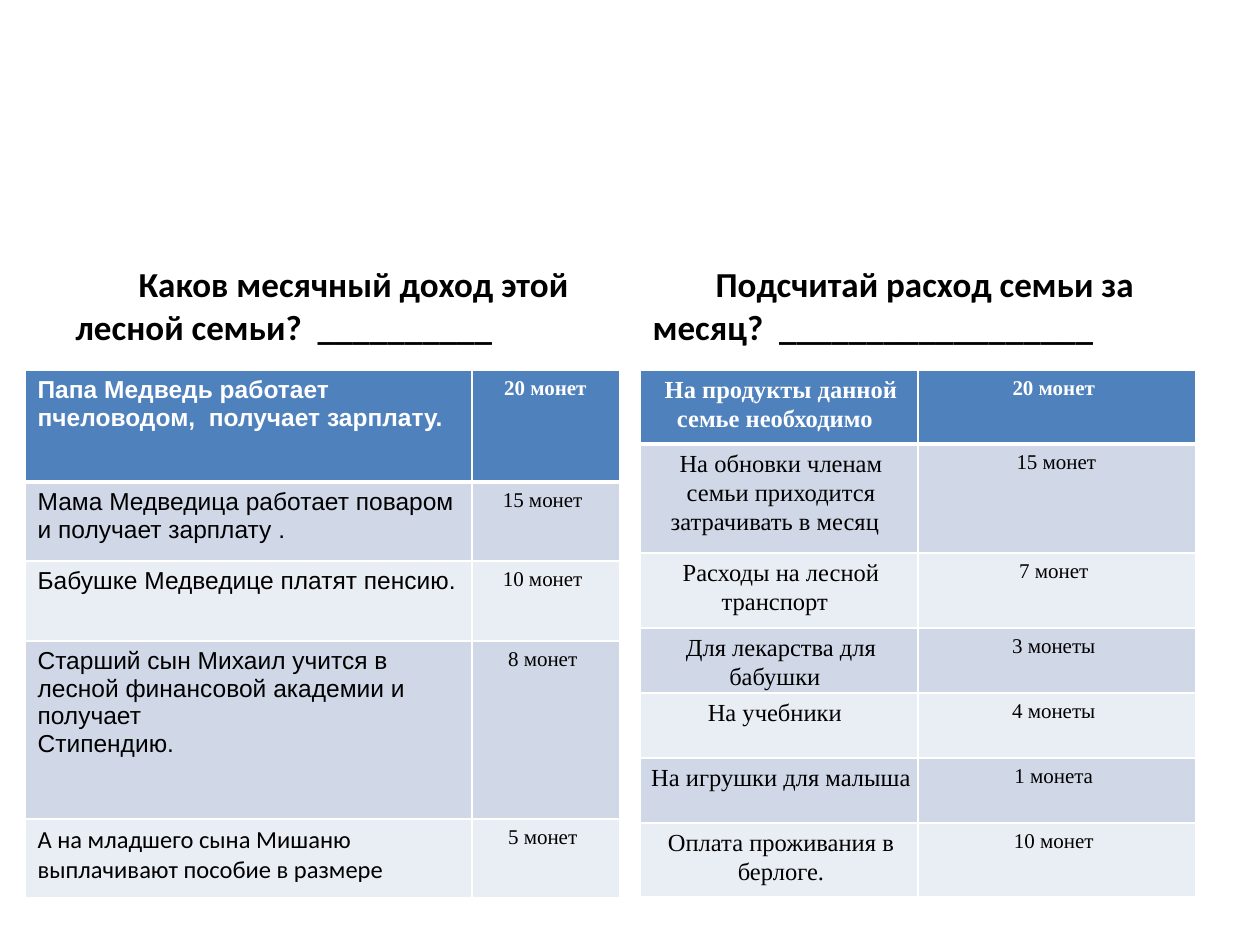
from dataclasses import dataclass

from lxml.etree import SubElement
from pptx import Presentation
from pptx.dml.color import RGBColor
from pptx.enum.text import MSO_ANCHOR as Anchor, PP_ALIGN as Align
from pptx.oxml.ns import qn
from pptx.util import Emu, Pt

BLUE = RGBColor(0x4F, 0x81, 0xBD)
MIST = RGBColor(0xD0, 0xD8, 0xE8)
PALE = RGBColor(0xE9, 0xED, 0xF4)
WHITE = RGBColor(0xFF, 0xFF, 0xFF)
BLACK = RGBColor(0, 0, 0)
SERIF = "Times New Roman"


@dataclass
class Row:
    high: int
    item: str
    sum: str
    font: str = SERIF


@dataclass
class Panel:
    slot: int
    head: str
    left: int
    wide: int
    grid: int
    cols: tuple[int, int]
    rows: list[Row]


PANELS = [
    Panel(1, "Каков месячный доход этой лесной семьи?  __________", 63, 557, 25, (447, 148), [
        Row(112, "Папа Медведь работает  пчеловодом,  получает зарплату.", "20 монет ", "Arial"),
        Row(79, "Мама Медведица работает поваром и получает зарплату .", "15 монет  ", "Arial"),
        Row(80, "Бабушке Медведице платят пенсию.", "10 монет  ", "Arial"),
        Row(178, "Старший сын Михаил учится в лесной финансовой академии и получает\nСтипендию.",
            "8 монет  ", "Arial"),
        Row(79, "А на младшего сына Мишаню выплачивают пособие в размере", "5 монет  ", "Calibri"),
    ]),
    Panel(3, "Подсчитай расход семьи за месяц?  __________________", 640, 557, 640, (278, 278), [
        Row(74, "На продукты данной семье необходимо  ", "20 монет  "),
        Row(109, "На обновки членам семьи приходится затрачивать в месяц  ", "15 монет "),
        Row(75, "Расходы на лесной транспорт  ", "7 монет  "),
        Row(65, "Для лекарства для бабушки  ", "3 монеты  "),
        Row(65, "На учебники  ", "4 монеты  "),
        Row(65, "На игрушки для малыша  ", "1 монета  "),
        Row(74, "Оплата проживания в берлоге.", "10 монет  "),
    ]),
]


def px(num: int) -> Emu:
    """Turn pixels into EMU."""
    return Emu(round(num * 914400 / 126))


def style(font, name: str, size: int, color: RGBColor, bold: bool) -> None:
    """Set the look of a font."""
    font.name, font.size, font.bold = name, Pt(size), bold
    font.color.rgb = color


def edge(cell, row: int) -> None:
    """Draw white borders, thick below the header row."""
    thick = {0: "lnB", 1: "lnT"}.get(row)
    props = cell._tc.get_or_add_tcPr()
    for tag in ("lnL", "lnR", "lnT", "lnB"):
        line = SubElement(props, qn(f"a:{tag}"), w=str(Pt(3 if tag == thick else 1)))
        fill = SubElement(line, qn("a:solidFill"))
        SubElement(fill, qn("a:srgbClr"), val=str(WHITE))


def write(cell, text: str, row: int, font: str, size: int) -> None:
    """Fill one table cell."""
    edge(cell, row)
    cell.fill.solid()
    cell.fill.fore_color.rgb = BLUE if row == 0 else (PALE, MIST)[row % 2]
    cell.text_frame.text = text
    if font == SERIF:
        cell.margin_left, cell.margin_top = px(10), px(5)
        cell.margin_right, cell.margin_bottom = px(6), px(0)
    for para in cell.text_frame.paragraphs:
        if font == SERIF:
            para.alignment, para.line_spacing = Align.CENTER, 1.07
        for run in para.runs:
            style(run.font, font, size, BLACK if row else WHITE, row == 0)


def title(slide, panel: Panel) -> None:
    """Write the heading above a table."""
    box = slide.placeholders[panel.slot]
    box.left, box.top = px(panel.left), px(212)
    box.width, box.height = px(panel.wide), px(142)
    box.text_frame.vertical_anchor = Anchor.BOTTOM
    para = box.text_frame.paragraphs[0]
    para.text = "\t"
    para.add_run().text = panel.head
    for run, size in zip(para.runs, (24, 20)):
        style(run.font, "Calibri", size, BLACK, True)


def grid(slide, panel: Panel) -> None:
    """Draw the table of a panel."""
    high = sum(row.high for row in panel.rows)
    table = slide.shapes.add_table(len(panel.rows), 2, px(panel.grid), px(370),
                                   px(sum(panel.cols)), px(high)).table
    for col, wide in zip(table.columns, panel.cols):
        col.width = px(wide)
    for num, row in enumerate(panel.rows):
        table.rows[num].height = px(row.high)
        write(table.cell(num, 0), row.item, num, row.font, 14)
        write(table.cell(num, 1), row.sum, num, SERIF, 12)


def main() -> None:
    """Build the slide on the comparison layout."""
    deck = Presentation()
    deck.slide_width, deck.slide_height = px(1260), px(945)
    slide = deck.slides.add_slide(deck.slide_layouts[4])
    for panel in PANELS:
        title(slide, panel)
        grid(slide, panel)
    for box in list(slide.placeholders):
        if not box.text_frame.text:
            box.element.getparent().remove(box.element)
    deck.save("out.pptx")


if __name__ == "__main__":
    main()
